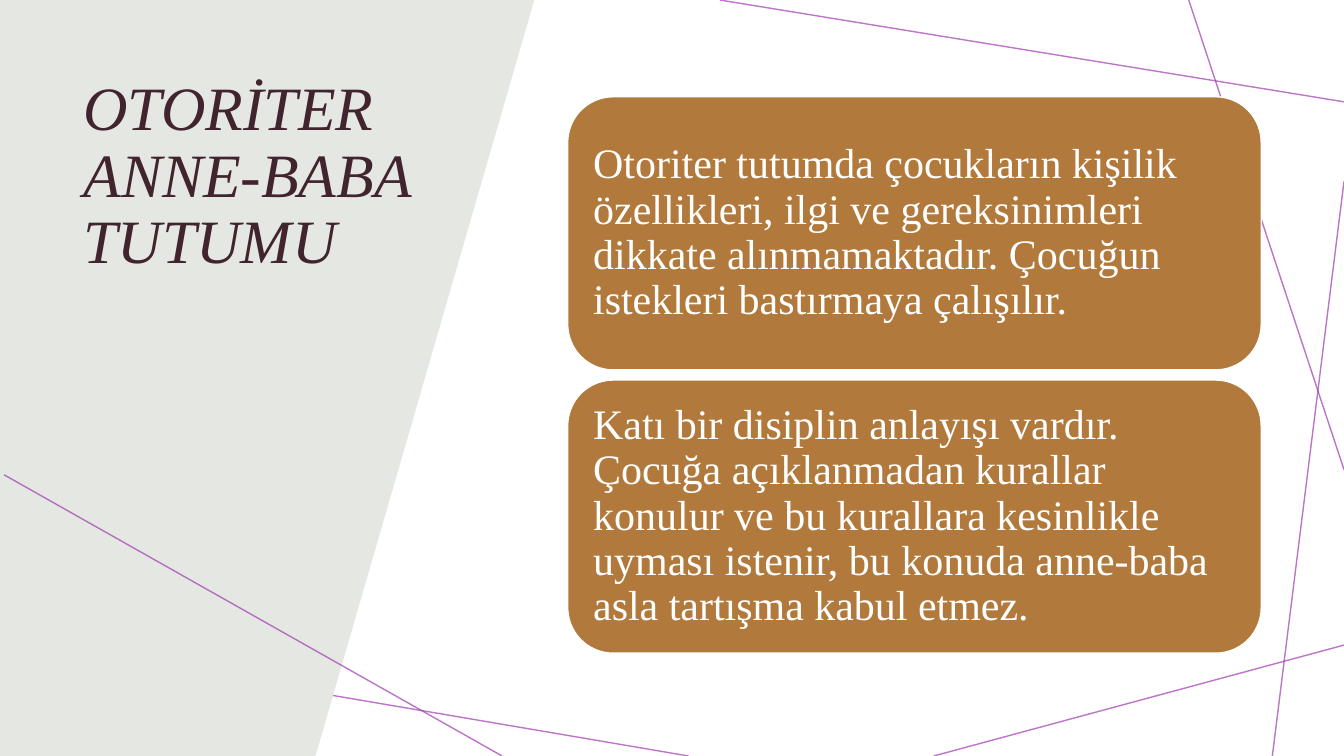
from lxml import etree
from pptx import Presentation, util as u
from pptx.dml.color import RGBColor
from pptx.enum import shapes as s, text as t
from pptx.oxml import ns

FONT = "Times New Roman"
presentation = Presentation()
presentation.slide_width, presentation.slide_height = u.Inches(13.33), u.Inches(7.5)
slide = presentation.slides.add_slide(presentation.slide_layouts[6])

# Grid of 100 columns by 100 rows
COLUMN = presentation.slide_width / 100
ROW = presentation.slide_height / 100


def color(hex_string):
    return RGBColor.from_string(hex_string)


def add_line(x1, y1, x2, y2):
    line = slide.shapes.add_connector(
        s.MSO_CONNECTOR.STRAIGHT,
        round(x1 * COLUMN), round(y1 * ROW), round(x2 * COLUMN), round(y2 * ROW))
    line.line.width = u.Pt(1)
    line.line.color.rgb = color("A03BB1")
    fill = line._element.spPr.find(".//" + ns.qn("a:srgbClr"))
    etree.SubElement(fill, ns.qn("a:alpha"), val="70000")
    etree.SubElement(line._element.spPr, ns.qn("a:effectLst"))


# Background lines
for ends in [(51.24, 100, 0, 84.5), (100, 85.33, 69.47, 100), (100, 24, 94.67, 100),
             (100, 62.13, 88.45, 0), (100, 13.47, 53.56, 0)]:
    add_line(*ends)

# Slanted panel on the left
corners = [(round(x * COLUMN), round(y * ROW))
           for x, y in [(23.48, 100), (0, 100), (0, 0), (39.76, 0)]]
builder = slide.shapes.build_freeform(*corners[0])
builder.add_line_segments(corners[1:], close=True)
panel = builder.convert_to_shape()
panel.shadow.inherit = False
panel.fill.solid()
panel.fill.fore_color.rgb = color("E5E8E2")
panel.line.fill.background()

# Title
title = slide.shapes.add_textbox(
    round(5.48 * COLUMN), round(9.6 * ROW), round(26.48 * COLUMN), round(52 * ROW))
title.text_frame.word_wrap = True
paragraph = title.text_frame.paragraphs[0]
paragraph.text = "OTORİTER ANNE-BABA TUTUMU"
paragraph.line_spacing = 0.9
paragraph.font.name, paragraph.font.size = FONT, u.Pt(44)
paragraph.font.italic = True
paragraph.font.color.rgb = color("41242D")

# Line across the panel
add_line(0.3, 62.8, 37.36, 100)

# Cards
CARD_TOP, CARD_HEIGHT, CARD_PITCH = 12.8, 36.13, 37.47
cards = [
    "Otoriter tutumda çocukların kişilik özellikleri, ilgi ve gereksinimleri "
    "dikkate alınmamaktadır. Çocuğun istekleri bastırmaya çalışılır.",
    "Katı bir disiplin anlayışı vardır. Çocuğa açıklanmadan kurallar konulur ve "
    "bu kurallara kesinlikle uyması istenir, bu konuda anne-baba asla tartışma "
    "kabul etmez.",
]
for index, wording in enumerate(cards):
    card = slide.shapes.add_shape(
        s.MSO_SHAPE.ROUNDED_RECTANGLE,
        round(42.24 * COLUMN), round((CARD_TOP + index * CARD_PITCH) * ROW),
        round(51.6 * COLUMN), round(CARD_HEIGHT * ROW))
    card.shadow.inherit = False
    card.fill.solid()
    card.fill.fore_color.rgb = color("B1793B")
    card.line.color.rgb = color("FFFFFF")
    card.line.width = u.Pt(1)
    frame = card.text_frame
    frame.word_wrap = True
    frame.vertical_anchor = t.MSO_ANCHOR.MIDDLE
    # The rounded corners already add 0.13 inch to each inset
    frame.margin_left = frame.margin_right = u.Inches(0.12)
    frame.margin_top = frame.margin_bottom = u.Inches(0.12)
    paragraph = frame.paragraphs[0]
    paragraph.text = wording
    paragraph.alignment = t.PP_ALIGN.LEFT
    paragraph.line_spacing = 0.9
    paragraph.font.name, paragraph.font.size = FONT, u.Pt(30)
    paragraph.font.color.rgb = color("FFFFFF")

presentation.save("out.pptx")
